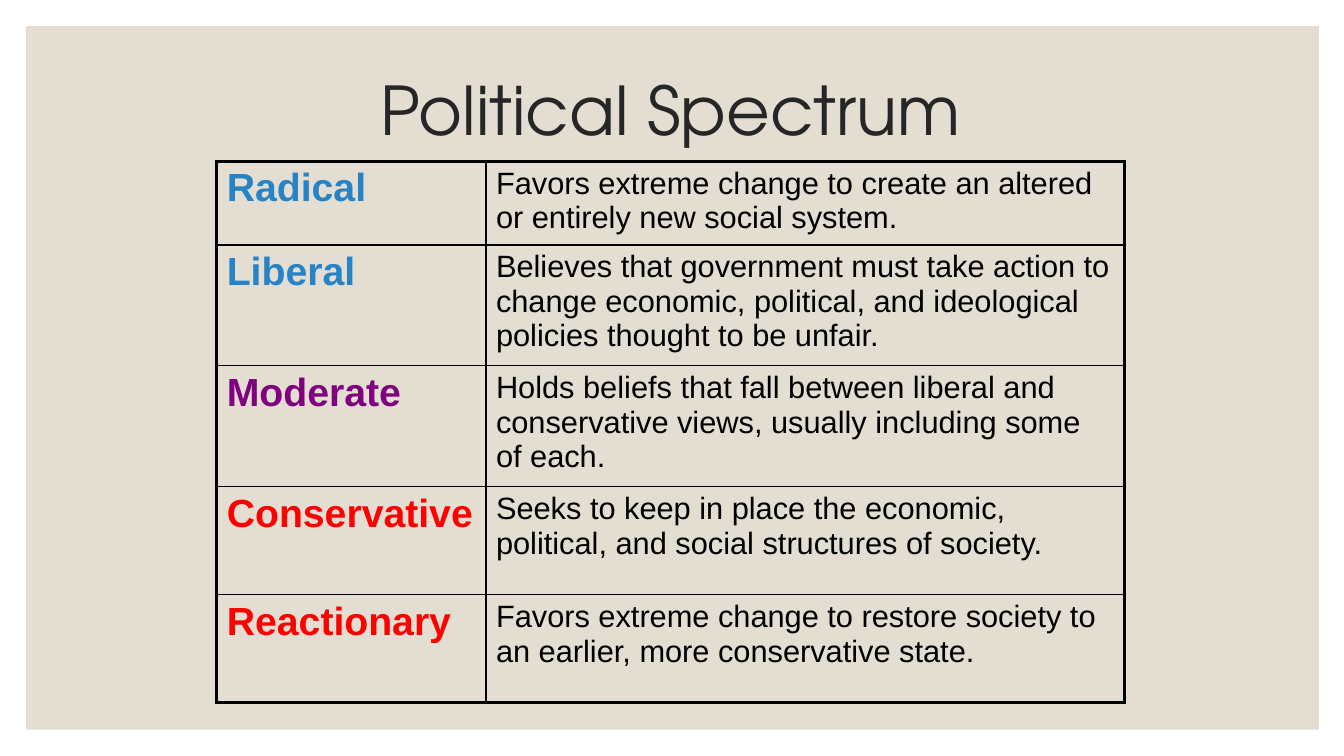
from lxml import etree
from pptx import Presentation
from pptx.dml.color import RGBColor
from pptx.enum import shapes, text
from pptx.oxml import ns
from pptx.util import Inches, Pt

BEIGE = RGBColor(0xE3, 0xDE, 0xD1)
CHARCOAL = RGBColor(0x26, 0x26, 0x26)
BLACK = RGBColor(0, 0, 0)
BLUE = RGBColor(0x26, 0x83, 0xC6)
PURPLE = RGBColor(0x80, 0, 0x80)
RED = RGBColor(0xFF, 0, 0)

POSITIONS = [
    ("Radical", BLUE, 0.83,
     "Favors extreme change to create an altered or entirely new social system."),
    ("Liberal", BLUE, 1.2,
     "Believes that government must take action to change economic, political, "
     "and ideological policies thought to be unfair."),
    ("Moderate", PURPLE, 1.2,
     "Holds beliefs that fall between liberal and conservative views, usually "
     "including some of each."),
    ("Conservative", RED, 1.07,
     "Seeks to keep in place the economic, political, and social structures of society."),
    ("Reactionary", RED, 1.07,
     "Favors extreme change to restore society to an earlier, more conservative state."),
]
COLUMN_WIDTHS = (2.67, 6.33)
THICK, THIN = Pt(2.25), Pt(1)


def write_text(frame, words, *, size, color, font="Arial", bold=False, align=None):
    para = frame.paragraphs[0]
    para.alignment = align
    span = para.add_run()
    span.text = words
    span.font.name = font
    span.font.size = Pt(size)
    span.font.bold = bold
    span.font.color.rgb = color
    return para


def add_element(parent, tag, **attributes):
    return etree.SubElement(parent, ns.qn(tag), **attributes)


def set_borders(cell, widths):
    properties = cell._tc.get_or_add_tcPr()
    for side, width in zip("LRTB", widths):
        line = add_element(properties, f"a:ln{side}", w=str(width))
        fill = add_element(line, "a:solidFill")
        add_element(fill, "a:srgbClr", val=str(BLACK))


def add_panel(page, left, top, width, height):
    panel = page.shapes.add_shape(
        shapes.MSO_SHAPE.RECTANGLE, Inches(left), Inches(top), Inches(width), Inches(height))
    panel.shadow.inherit = False
    panel.fill.solid()
    panel.fill.fore_color.rgb = BEIGE
    panel.line.fill.background()
    page.shapes.title.element.addprevious(panel.element)


def place_title(page, left, top, width, height):
    title = page.shapes.title
    title.left, title.top = Inches(left), Inches(top)
    title.width, title.height = Inches(width), Inches(height)
    frame = title.text_frame
    frame.word_wrap = True
    frame.vertical_anchor = text.MSO_ANCHOR.MIDDLE
    para = write_text(frame, "Political Spectrum", size=48, color=CHARCOAL,
                      font="TeX Gyre Adventor", align=text.PP_ALIGN.CENTER)
    para.line_spacing = 0.9


def add_spectrum_table(page, left, top):
    width = sum(COLUMN_WIDTHS)
    height = sum(position[2] for position in POSITIONS)
    table = page.shapes.add_table(
        len(POSITIONS), len(COLUMN_WIDTHS),
        Inches(left), Inches(top), Inches(width), Inches(height)).table
    table.first_row = table.horz_banding = False
    for column, column_width in zip(table.columns, COLUMN_WIDTHS):
        column.width = Inches(column_width)
    last = len(POSITIONS) - 1
    for index, (name, color, row_height, meaning) in enumerate(POSITIONS):
        table.rows[index].height = Inches(row_height)
        name_cell, meaning_cell = table.rows[index].cells
        edges = (THICK if index == 0 else THIN, THICK if index == last else THIN)
        set_borders(name_cell, (THICK, THIN, *edges))
        set_borders(meaning_cell, (THIN, THICK, *edges))
        name_para = write_text(name_cell.text_frame, name, size=28, color=color, bold=True)
        meaning_para = write_text(meaning_cell.text_frame, meaning, size=22, color=BLACK)
        for cell, para in ((name_cell, name_para), (meaning_cell, meaning_para)):
            cell.fill.background()
            spacing = add_element(para._p.get_or_add_pPr(), "a:spcBef")
            add_element(spacing, "a:spcPct", val="20000")


def main():
    deck = Presentation()
    deck.slide_width, deck.slide_height = Inches(13.33), Inches(7.5)
    page = deck.slides.add_slide(deck.slide_layouts.get_by_name("Title Only"))
    add_panel(page, 0.26, 0.26, 12.82, 6.98)
    place_title(page, 1.15, 0.38, 11, 1.5)
    add_spectrum_table(page, 2.15, 1.6)
    deck.save("out.pptx")


if __name__ == "__main__":
    main()
